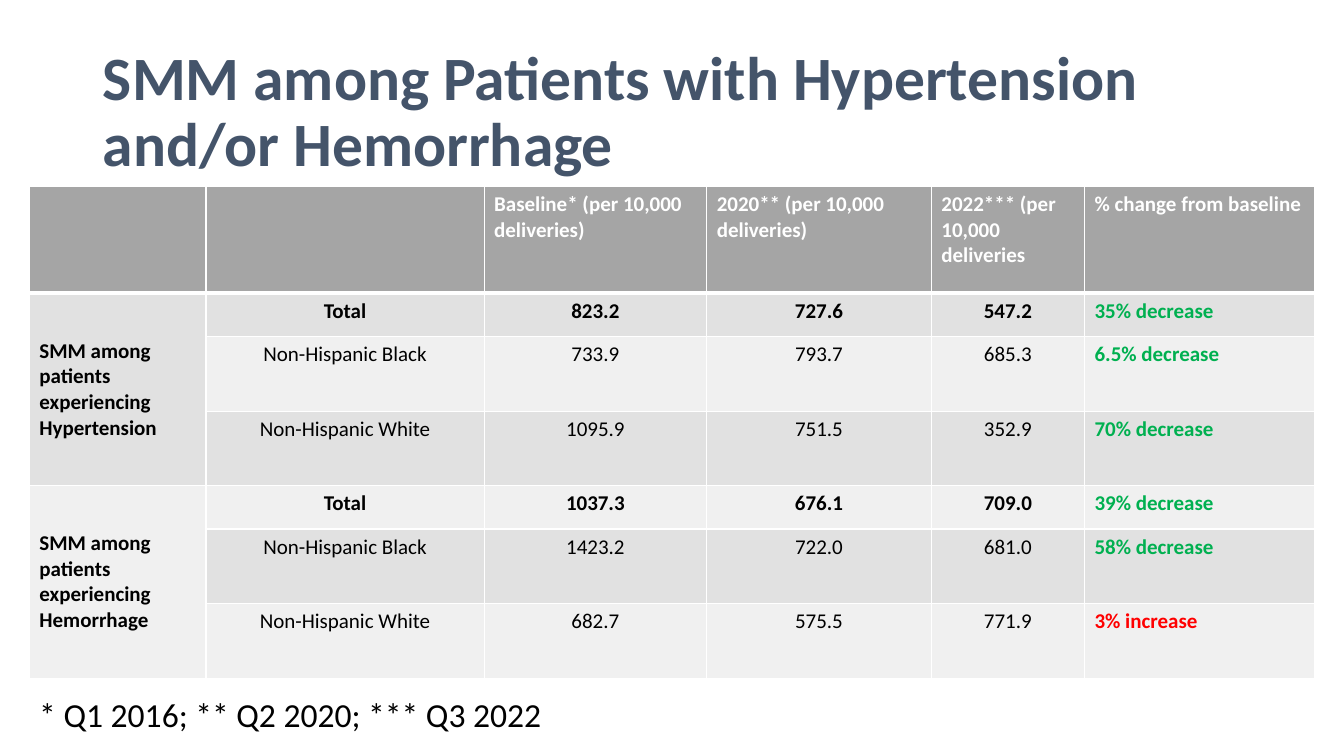
from lxml import etree
from pptx import Presentation, util as u
from pptx.dml.color import RGBColor
from pptx.enum import text
from pptx.oxml.ns import qn

FONT = "Calibri"
WHITE, BLACK, SLATE = "FFFFFF", "000000", "44546A"
GREEN, RED = "00B050", "FF0000"
HEADER_FILL, BANDS = "A5A5A5", ("E1E1E1", "F0F0F0")
COLUMN_WIDTHS = (4.45, 7.01, 5.61, 5.66, 3.86, 5.79)
HEADER_HEIGHT, GROUP_HEIGHTS = 2.69, (1.09, 1.88, 1.88)
HEADINGS = (
    "",
    "",
    "Baseline* (per 10,000 deliveries)",
    "2020** (per 10,000 deliveries)",
    "2022*** (per 10,000 deliveries",
    "% change from baseline",
)
GROUPS = (
    ("SMM among patients experiencing Hypertension", (
        ("Total", "823.2", "727.6", "547.2", "35% decrease"),
        ("Non-Hispanic Black", "733.9", "793.7", "685.3", "6.5% decrease"),
        ("Non-Hispanic White", "1095.9", "751.5", "352.9", "70% decrease"),
    )),
    ("SMM among patients experiencing Hemorrhage", (
        ("Total", "1037.3", "676.1", "709.0", "39% decrease"),
        ("Non-Hispanic Black", "1423.2", "722.0", "681.0", "58% decrease"),
        ("Non-Hispanic White", "682.7", "575.5", "771.9", "3% increase"),
    )),
)


def colour(value):
    return RGBColor.from_string(value)


def place(shape, left, top, width, height):
    shape.left, shape.top = u.Cm(left), u.Cm(top)
    shape.width, shape.height = u.Cm(width), u.Cm(height)


def write(frame, words, size, ink, bold=False, align=text.PP_ALIGN.LEFT):
    para = frame.paragraphs[0]
    para.alignment = align
    span = para.add_run()
    span.text = words
    span.font.name, span.font.size = FONT, u.Pt(size)
    span.font.bold = bold
    span.font.color.rgb = colour(ink)
    return para


def paint_cell(cell, fill, top=1, bottom=1):
    cell.fill.solid()
    cell.fill.fore_color.rgb = colour(fill)
    properties = cell._tc.get_or_add_tcPr()
    edges = (("a:lnL", 1), ("a:lnR", 1), ("a:lnT", top), ("a:lnB", bottom))
    for position, (tag, points) in enumerate(edges):
        line = etree.Element(qn(tag), w=str(u.Pt(points)))
        paint = etree.SubElement(line, qn("a:solidFill"))
        etree.SubElement(paint, qn("a:srgbClr"), val=WHITE)
        properties.insert(position, line)


def add_title(page, words):
    title = page.shapes.title
    place(title, 2.34, 1.02, 29.21, 3.68)
    frame = title.text_frame
    frame.auto_size = text.MSO_AUTO_SIZE.NONE
    frame.vertical_anchor = text.MSO_ANCHOR.MIDDLE
    write(frame, words, 44, SLATE, bold=True).line_spacing = 0.9


def fill_group(table, first, name, records):
    label = table.cell(first, 0)
    label.merge(table.cell(first + len(records) - 1, 0))
    label.vertical_anchor = text.MSO_ANCHOR.MIDDLE
    write(label.text_frame, name, 15, BLACK, bold=True)
    for row, record in enumerate(records, first):
        total = record[0] == "Total"
        for column, words in enumerate(record[:-1], 1):
            write(table.cell(row, column).text_frame, words, 15, BLACK,
                  total, text.PP_ALIGN.CENTER)
        ink = RED if "increase" in record[-1] else GREEN
        write(table.cell(row, 5).text_frame, record[-1], 15, ink, bold=True)


def add_rate_table(page):
    heights = (HEADER_HEIGHT,) + GROUP_HEIGHTS * len(GROUPS)
    table = page.shapes.add_table(
        len(heights), len(COLUMN_WIDTHS), u.Cm(0.74), u.Cm(4.7),
        u.Cm(sum(COLUMN_WIDTHS)), u.Cm(sum(heights))).table
    for column, width in zip(table.columns, COLUMN_WIDTHS):
        column.width = u.Cm(width)
    for index, (row, height) in enumerate(zip(table.rows, heights)):
        row.height = u.Cm(height)
        fill = BANDS[(index - 1) % 2] if index else HEADER_FILL
        for cell in row.cells:
            paint_cell(cell, fill, top=3 if index == 1 else 1,
                       bottom=1 if index else 3)
    for column, heading in enumerate(HEADINGS):
        if heading:
            write(table.cell(0, column).text_frame, heading, 15, WHITE, bold=True)
    for index, (name, records) in enumerate(GROUPS):
        fill_group(table, 1 + index * len(GROUP_HEIGHTS), name, records)


def add_footnote(page, words):
    box = page.shapes.add_textbox(u.Cm(0.74), u.Cm(17.37), u.Cm(39.19), u.Cm(2.31))
    box.text_frame.word_wrap = True
    box.text_frame.auto_size = text.MSO_AUTO_SIZE.SHAPE_TO_FIT_TEXT
    write(box.text_frame, words, 24, BLACK)


def main():
    deck = Presentation()
    deck.slide_width, deck.slide_height = u.Cm(33.87), u.Cm(19.05)
    page = deck.slides.add_slide(deck.slide_layouts.get_by_name("Title Only"))
    add_title(page, "SMM among Patients with Hypertension and/or Hemorrhage")
    add_rate_table(page)
    add_footnote(page, "* Q1 2016; ** Q2 2020; *** Q3 2022")
    deck.save("out.pptx")


if __name__ == "__main__":
    main()
